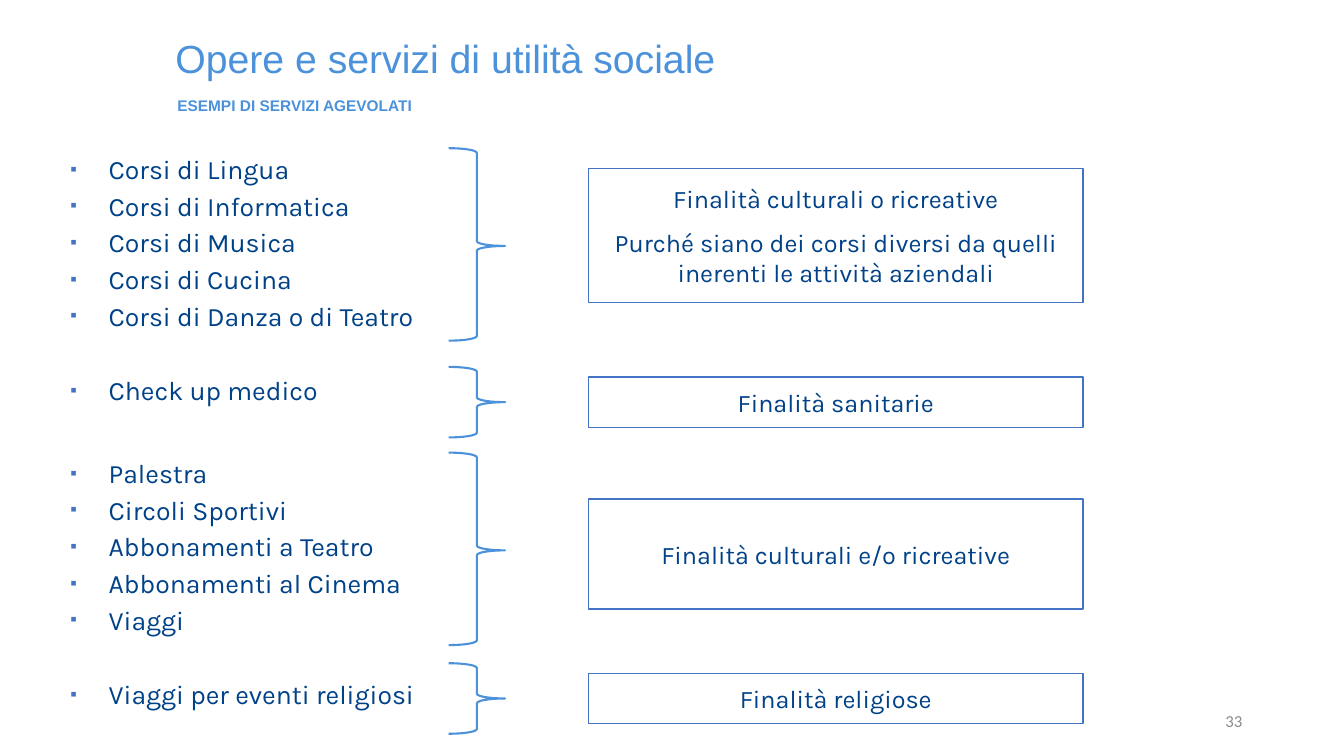
"""Build the slide on works and services of social utility."""
from dataclasses import dataclass

from lxml.etree import SubElement
from pptx import Presentation
from pptx.dml.color import RGBColor
from pptx.enum.shapes import MSO_SHAPE as Preset
from pptx.enum.text import MSO_ANCHOR as Anchor, MSO_AUTO_SIZE as AutoSize, PP_ALIGN as Align
from pptx.oxml.ns import qn
from pptx.util import Pt

EMU_PER_PX = 9144


@dataclass(frozen=True)
class Theme:
    """Colours, fonts and type sizes of the slide."""
    accent: str = "4B92DB"
    outline: str = "4472C4"
    body: str = "004288"
    muted: str = "8C8C8C"
    paper: str = "FFFFFF"
    heading_font: str = "Arial"
    body_font: str = "Karla"
    number_font: str = "Calibri"
    title_size: int = 28
    subtitle_size: int = 11
    list_size: int = 19
    purpose_size: int = 18
    number_size: int = 12


@dataclass(frozen=True)
class Group:
    """Services, their brace and the purpose they serve."""
    services: tuple
    purpose: tuple
    brace: tuple
    box: tuple
    gap: int = 0


GROUPS = (
    Group(("Corsi di Lingua", "Corsi di Informatica", "Corsi di Musica",
           "Corsi di Cucina", "Corsi di Danza o di Teatro"),
          ("Finalità culturali o ricreative",
           "Purché siano dei corsi diversi da quelli inerenti le attività aziendali"),
          (147, 191), (167, 133)),
    Group(("Check up medico",), ("Finalità sanitarie",), (364, 70), (374, 50), 27),
    Group(("Palestra", "Circoli Sportivi", "Abbonamenti a Teatro",
           "Abbonamenti al Cinema", "Viaggi"),
          ("Finalità culturali e/o ricreative",), (449, 191), (495, 109), 33),
    Group(("Viaggi per eventi religiosi",), ("Finalità religiose",), (658, 70), (668, 50), 27),
)


def px(*lengths):
    """Turn px into EMU."""
    return [length * EMU_PER_PX for length in lengths]


class SlideBuilder:
    """Draws each kind of element on the current slide."""

    def __init__(self, slide, theme):
        """Keep the slide and its theme."""
        self.slide = slide
        self.theme = theme

    def set_text(self, paragraph, text, font, size, color, align=Align.LEFT, bold=False):
        """Put one styled text in a paragraph."""
        paragraph.text = text
        paragraph.alignment = align
        paragraph.font.name = font
        paragraph.font.size = Pt(size)
        paragraph.font.bold = bold
        paragraph.font.color.rgb = RGBColor.from_string(color)

    def paragraphs(self, frame, count):
        """Return the given number of paragraphs of a text frame."""
        return [frame.paragraphs[0]] + [frame.add_paragraph() for _ in range(count - 1)]

    def text_frame(self, bounds, anchor):
        """Add a wrapping text box and return its frame."""
        frame = self.slide.shapes.add_textbox(*px(*bounds)).text_frame
        frame.word_wrap = True
        frame.vertical_anchor = anchor
        return frame

    def title(self, text, bounds):
        """Move and format the title placeholder."""
        shape = self.slide.shapes.title
        shape.left, shape.top, shape.width, shape.height = px(*bounds)
        frame = shape.text_frame
        frame.word_wrap = False
        frame.auto_size = AutoSize.SHAPE_TO_FIT_TEXT
        frame.vertical_anchor = Anchor.TOP
        self.set_text(frame.paragraphs[0], text, self.theme.heading_font,
                      self.theme.title_size, self.theme.accent)

    def subtitle(self, text, bounds):
        """Add the bold line under the title."""
        paragraph = self.text_frame(bounds, Anchor.MIDDLE).paragraphs[0]
        self.set_text(paragraph, text, self.theme.heading_font, self.theme.subtitle_size,
                      self.theme.accent, Align.JUSTIFY, True)
        paragraph.line_spacing = 1.5

    def page_number(self, text, bounds):
        """Add the page number."""
        paragraph = self.text_frame(bounds, Anchor.MIDDLE).paragraphs[0]
        self.set_text(paragraph, text, self.theme.number_font, self.theme.number_size,
                      self.theme.muted, Align.RIGHT)

    def bullet(self, paragraph):
        """Give a paragraph a small square bullet and a hanging indent."""
        properties = paragraph._p.get_or_add_pPr()
        indent = px(38)[0]
        properties.set("marL", str(indent))
        properties.set("indent", str(-indent))
        color = SubElement(properties, qn("a:buClr"))
        SubElement(color, qn("a:srgbClr"), val=self.theme.outline)
        SubElement(properties, qn("a:buSzPct"), val="70000")
        SubElement(properties, qn("a:buFont"), typeface=self.theme.heading_font)
        SubElement(properties, qn("a:buChar"), char="▪")
        properties.append(properties.find(qn("a:defRPr")))

    def service_list(self, groups, bounds):
        """Add the bulleted services with a gap before each group."""
        entries = [(service, 0 if position else group.gap)
                   for group in groups for position, service in enumerate(group.services)]
        frame = self.text_frame(bounds, Anchor.TOP)
        frame.auto_size = AutoSize.SHAPE_TO_FIT_TEXT
        for paragraph, (service, gap) in zip(self.paragraphs(frame, len(entries)), entries):
            self.set_text(paragraph, service, self.theme.body_font, self.theme.list_size,
                          self.theme.body, Align.JUSTIFY)
            paragraph.line_spacing = 1.15
            paragraph.space_before = Pt(gap)
            self.bullet(paragraph)

    def outlined(self, preset, bounds, color, weight):
        """Add a preset shape with an outline and no shadow."""
        shape = self.slide.shapes.add_shape(preset, *px(*bounds))
        shape.shadow.inherit = False
        shape.line.color.rgb = RGBColor.from_string(color)
        shape.line.width = Pt(weight)
        return shape

    def brace(self, top, height):
        """Add the brace that gathers a group of services."""
        shape = self.outlined(Preset.RIGHT_BRACE, (445, top, 56, height), self.theme.accent, 1.5)
        shape.fill.background()
        if height > 100:
            shape.adjustments[1] = 0.508

    def purpose_box(self, lines, top, height):
        """Add the box that names the purpose of a group."""
        shape = self.outlined(Preset.RECTANGLE, (584, top, 490, height), self.theme.outline, 1)
        shape.fill.solid()
        shape.fill.fore_color.rgb = RGBColor.from_string(self.theme.paper)
        frame = shape.text_frame
        frame.word_wrap = True
        frame.vertical_anchor = Anchor.MIDDLE
        for position, paragraph in enumerate(self.paragraphs(frame, len(lines))):
            self.set_text(paragraph, lines[position], self.theme.body_font,
                          self.theme.purpose_size, self.theme.body, Align.CENTER)
            paragraph.space_before = Pt(10 * position)


def main():
    """Build and save the presentation."""
    presentation = Presentation()
    presentation.slide_width, presentation.slide_height = px(1333, 750)
    slide = presentation.slides.add_slide(presentation.slide_layouts[5])
    builder = SlideBuilder(slide, Theme())
    builder.title("Opere e servizi di utilità sociale", (164, 29, 562, 57))
    builder.subtitle("ESEMPI DI SERVIZI AGEVOLATI", (166, 80, 398, 39))
    for group in GROUPS:
        builder.brace(*group.brace)
        builder.purpose_box(group.purpose, *group.box)
    builder.service_list(GROUPS, (60, 142, 667, 581))
    builder.page_number("33", (942, 695, 300, 40))
    presentation.save("out.pptx")


if __name__ == "__main__":
    main()
